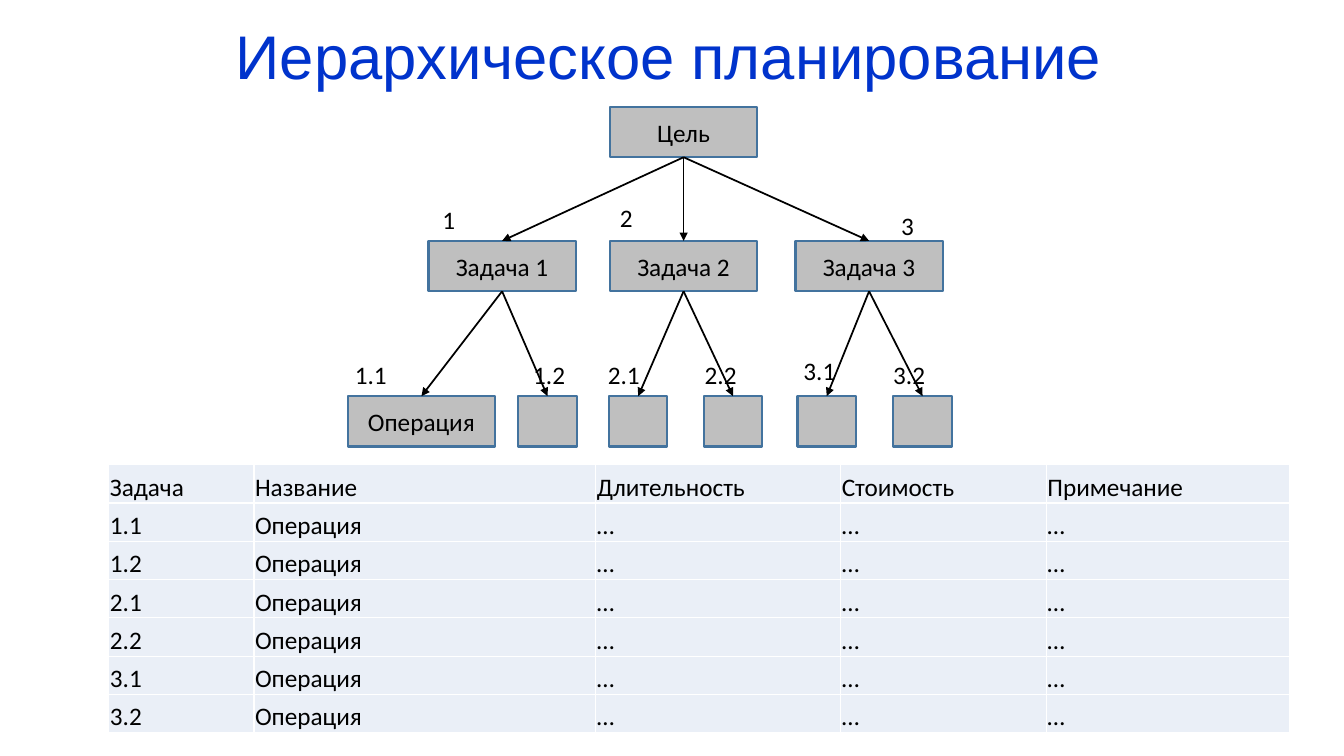
from lxml import etree
from pptx import Presentation
from pptx.dml.color import RGBColor
from pptx.enum.shapes import MSO_CONNECTOR, MSO_SHAPE
from pptx.enum.text import MSO_ANCHOR, MSO_AUTO_SIZE, PP_ALIGN
from pptx.oxml.ns import qn
from pptx.util import Inches, Pt

RECTANGLE, STRAIGHT = MSO_SHAPE.RECTANGLE, MSO_CONNECTOR.STRAIGHT
TOP, MIDDLE, BOTTOM = MSO_ANCHOR.TOP, MSO_ANCHOR.MIDDLE, MSO_ANCHOR.BOTTOM
LEFT, CENTER = PP_ALIGN.LEFT, PP_ALIGN.CENTER
FIT_SHAPE = MSO_AUTO_SIZE.SHAPE_TO_FIT_TEXT

# Content
TITLE = "Иерархическое планирование"
WIDE, NARROW, BOX_HEIGHT = 1.46, 0.58, 0.5
# Nodes: number, text, left, top, width, label left, label top
NODES = [
    ("", "Цель", 6.05, 1.06, WIDE, None, None),
    ("1", "Задача 1", 4.25, 2.39, WIDE, 4.29, 1.98),
    ("2", "Задача 2", 6.05, 2.39, WIDE, 6.05, 1.96),
    ("3", "Задача 3", 7.89, 2.39, WIDE, 8.84, 2.04),
    ("1.1", "Операция", 3.45, 3.93, WIDE, 3.42, 3.52),
    ("1.2", "", 5.14, 3.93, NARROW, 5.19, 3.52),
    ("2.1", "", 6.04, 3.93, NARROW, 5.93, 3.52),
    ("2.2", "", 6.98, 3.93, NARROW, 6.89, 3.52),
    ("3.1", "", 7.91, 3.93, NARROW, 7.87, 3.48),
    ("3.2", "", 8.86, 3.93, NARROW, 8.76, 3.52),
]
HEADER = ("Задача", "Название", "Длительность", "Стоимость", "Примечание")
OPERATIONS = [node[0] for node in NODES if "." in node[0]]
ROWS = [HEADER] + [(number, "Операция", "…", "…", "…") for number in OPERATIONS]
COLUMN_WIDTHS = (1.44, 3.39, 2.43, 2.04, 2.41)
ROW_HEIGHT = 0.38


def color(hex_string):
    return RGBColor.from_string(hex_string)


def write(frame, text, size=18, font="Calibri", ink="000000", align=LEFT, anchor=TOP):
    frame.vertical_anchor = anchor
    paragraph = frame.paragraphs[0]
    paragraph.alignment = align
    run = paragraph.add_run()
    run.text = text
    run.font.size, run.font.name = Pt(size), font
    run.font.color.rgb = color(ink)
    return paragraph


def add_box(slide, text, left, top, width):
    box = slide.shapes.add_shape(
        RECTANGLE, Inches(left), Inches(top), Inches(width), Inches(BOX_HEIGHT))
    box.shadow.inherit = False
    box.fill.solid()
    box.fill.fore_color.rgb = color("BFBFBF")
    box.line.color.rgb = color("43739E")
    box.line.width = Pt(1.5)
    if text:
        write(box.text_frame, text, align=CENTER, anchor=MIDDLE)
    return box


def add_arrow(slide, parent, child):
    arrow = slide.shapes.add_connector(STRAIGHT, 0, 0, 0, 0)
    arrow.begin_connect(parent, 2)  # bottom middle
    arrow.end_connect(child, 0)  # top middle
    arrow.line.color.rgb = color("000000")
    arrow.line.width = Pt(1.25)
    properties = arrow.element.spPr
    etree.SubElement(properties.find(qn("a:ln")), qn("a:tailEnd"), type="triangle")
    etree.SubElement(properties, qn("a:effectLst"))


def add_label(slide, number, left, top):
    width = 0.33 if len(number) == 1 else 0.52
    label = slide.shapes.add_textbox(
        Inches(left), Inches(top), Inches(width), Inches(0.4))
    label.text_frame.word_wrap = False
    label.text_frame.auto_size = FIT_SHAPE
    write(label.text_frame, number)


def format_cell(cell, text):
    cell.margin_left = cell.margin_right = cell.margin_top = Inches(0.01)
    cell.margin_bottom = 0
    cell.vertical_anchor = BOTTOM
    write(cell.text_frame, text)
    properties = cell._tc.get_or_add_tcPr()
    for side in ("a:lnL", "a:lnR", "a:lnT", "a:lnB"):
        border = etree.SubElement(properties, qn(side), w=str(Pt(1)))
        border_fill = etree.SubElement(border, qn("a:solidFill"))
        etree.SubElement(border_fill, qn("a:srgbClr"), val="FFFFFF")
    cell.fill.solid()
    cell.fill.fore_color.rgb = color("EAEFF7")


def add_operations_table(slide):
    table = slide.shapes.add_table(
        len(ROWS), len(HEADER), Inches(1.08), Inches(4.61),
        Inches(sum(COLUMN_WIDTHS)), Inches(ROW_HEIGHT * len(ROWS))).table
    for column, width in zip(table.columns, COLUMN_WIDTHS):
        column.width = Inches(width)
    for row_index, texts in enumerate(ROWS):
        table.rows[row_index].height = Inches(ROW_HEIGHT)
        for column_index, text in enumerate(texts):
            format_cell(table.cell(row_index, column_index), text)


def main():
    presentation = Presentation()
    presentation.slide_width, presentation.slide_height = Inches(13.33), Inches(7.5)
    slide = presentation.slides.add_slide(presentation.slide_layouts[5])

    # Title
    title = slide.shapes.title
    title.left, title.top = Inches(1.72), Inches(0.16)
    title.width, title.height = Inches(9.83), Inches(0.92)
    title.text_frame.margin_top = Inches(0.1)
    paragraph = write(title.text_frame, TITLE, size=44, font="Arial",
                      ink="0033CC", align=CENTER)
    paragraph.line_spacing = 0.9

    # Tree: a node's parent has its number without the last part
    boxes = {number: add_box(slide, text, left, top, width)
             for number, text, left, top, width, _, _ in NODES}
    numbered = NODES[1:]
    for number, *_ in numbered:
        add_arrow(slide, boxes[number.rpartition(".")[0]], boxes[number])
    for number, *_, label_left, label_top in numbered:
        add_label(slide, number, label_left, label_top)

    # Table of operations
    add_operations_table(slide)
    presentation.save("out.pptx")


if __name__ == "__main__":
    main()
